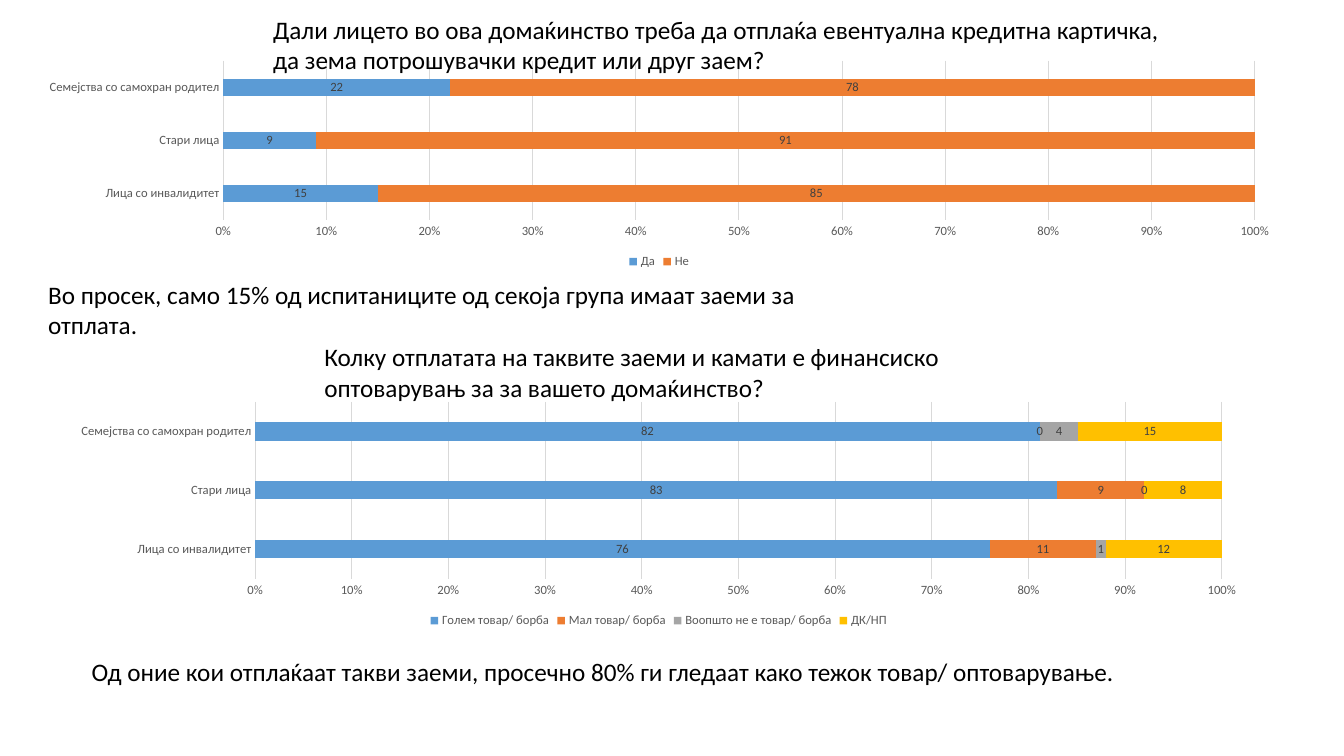
import pptx
import pptx.chart.data
import pptx.dml.color
import pptx.enum.chart
import pptx.enum.text
import pptx.util
from dataclasses import dataclass

Pt = pptx.util.Pt
RGB = pptx.dml.color.RGBColor.from_string
enum = pptx.enum.chart


@dataclass(frozen=True)
class Theme:
    font: str = "Calibri"
    ink: str = "000000"
    axis: str = "595959"
    label: str = "404040"
    grid: str = "D9D9D9"
    fills: tuple = ("5B9BD5", "ED7D31", "A5A5A5", "FFC000")
    head: float = 18
    small: float = 9
    rule: float = 0.75


THEME = Theme()
GROUPS = ["Лица со инвалидитет", "Стари лица", "Семејства со самохран родител"]


def apply(target, values):
    for name, value in values.items():
        setattr(target, name, value)


def style(font, size, color):
    apply(font, {"name": THEME.font, "size": Pt(size), "bold": False})
    font.color.rgb = RGB(color)


def rule(line):
    line.color.rgb = RGB(THEME.grid)
    line.width = Pt(THEME.rule)


def write(shape, box, lines):
    """Place a text shape in the box and fill it, one paragraph a line."""
    apply(shape, dict(zip(("left", "top", "width", "height"), map(Pt, box))))
    frame = shape.text_frame
    apply(frame, {
        "text": "\n".join(lines),
        "word_wrap": True,
        "auto_size": pptx.enum.text.MSO_AUTO_SIZE.NONE,
        "vertical_anchor": pptx.enum.text.MSO_ANCHOR.TOP,
    })
    for para in frame.paragraphs:
        apply(para, {"alignment": pptx.enum.text.PP_ALIGN.LEFT,
                     "line_spacing": 1.0, "space_before": Pt(0)})
        style(para.runs[0].font, THEME.head, THEME.ink)


def note(slide, box, lines):
    write(slide.shapes.add_textbox(*map(Pt, box)), box, lines)


def bars(slide, box, answers):
    """Draw answers by group as bars that each fill 100%."""
    data = pptx.chart.data.CategoryChartData(number_format="0")
    data.categories = GROUPS
    for name, values in answers.items():
        data.add_series(name, values)
    chart = slide.shapes.add_chart(
        enum.XL_CHART_TYPE.BAR_STACKED_100, *map(Pt, box), data).chart
    apply(chart, {"has_title": False, "has_legend": True})
    style(chart.font, 10, THEME.ink)
    apply(chart.legend, {"position": enum.XL_LEGEND_POSITION.BOTTOM,
                         "include_in_layout": False})
    style(chart.legend.font, THEME.small, THEME.axis)

    for axis in (chart.category_axis, chart.value_axis):
        apply(axis, {"major_tick_mark": enum.XL_TICK_MARK.NONE,
                     "minor_tick_mark": enum.XL_TICK_MARK.NONE})
        style(axis.tick_labels.font, THEME.small, THEME.axis)
    rule(chart.category_axis.format.line)
    scale = chart.value_axis
    scale.format.line.fill.background()
    rule(scale.major_gridlines.format.line)
    apply(scale.tick_labels, {"number_format": "0%",
                              "number_format_is_linked": False})

    plot = chart.plots[0]
    apply(plot, {"gap_width": 219, "overlap": 100, "vary_by_categories": False})
    for series, color in zip(plot.series, THEME.fills):
        series.format.fill.solid()
        series.format.fill.fore_color.rgb = RGB(color)
        labels = series.data_labels
        apply(labels, {"show_value": True, "number_format": "0",
                       "number_format_is_linked": False,
                       "position": enum.XL_LABEL_POSITION.CENTER})
        style(labels.font, THEME.small, THEME.label)


def loans(slide, box):
    """Who has loans: chart, slide title above it and finding below."""
    left, top, width, height = box
    bars(slide, box, {"Да": (15, 9, 22), "Не": (85, 91, 78)})
    title = slide.shapes.title
    slide.shapes._spTree.append(title._element)
    write(title, (left + 170.6, top - 33.8, 659, 51), [
        "Дали лицето во ова домаќинство треба да отплаќа евентуална кредитна картичка,",
        "да зема потрошувачки кредит или друг заем?"])
    note(slide, (left + 10, top + height + 0.7, 603.4, 29), [
        "Во просек, само 15% од испитаниците од секоја група имаат заеми за отплата."])


def burden(slide, box):
    """How heavy the loans are: chart, question above and finding below."""
    left, top, width, height = box
    bars(slide, box, {
        "Голем товар/ борба": (76, 83, 82),
        "Мал товар/ борба": (11, 9, 0),
        "Воопшто не е товар/ борба": (1, 0, 4),
        "ДК/НП": (12, 8, 15)})
    note(slide, (left + 183.6, top - 43.2, 458.6, 51), [
        "Колку отплатата на таквите заеми и камати е финансиско",
        "оптоварувањ за за вашето домаќинство?"])
    note(slide, (left + 17.3, top + height + 13.7, 754, 29), [
        "Од оние кои отплаќаат такви заеми, просечно 80% ги гледаат како тежок товар/ оптоварување."])


def main():
    deck = pptx.Presentation()
    apply(deck, {"slide_width": Pt(960), "slide_height": Pt(540)})
    slide = deck.slides.add_slide(deck.slide_layouts.get_by_name("Title Only"))
    loans(slide, (17.3, 40.3, 907.2, 154.8))
    burden(slide, (41, 283.7, 859, 167.8))
    deck.save("out.pptx")


if __name__ == "__main__":
    main()
